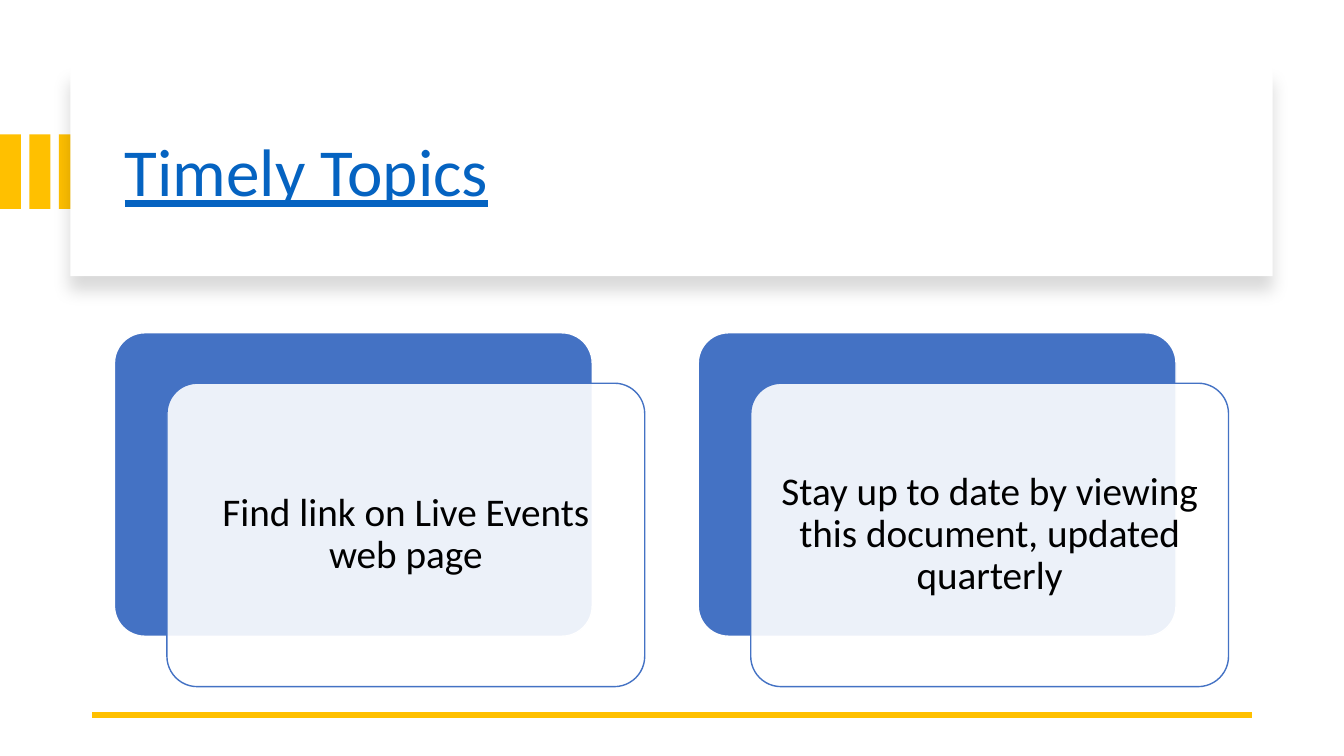
from lxml import etree
from pptx import Presentation
from pptx.dml.color import RGBColor
from pptx.enum.shapes import MSO_CONNECTOR, MSO_SHAPE
from pptx.enum.text import MSO_ANCHOR, MSO_AUTO_SIZE, PP_ALIGN
from pptx.oxml.ns import qn
from pptx.util import Pt

PX = 9525
RECT, ROUND = MSO_SHAPE.RECTANGLE, MSO_SHAPE.ROUNDED_RECTANGLE
STRAIGHT = MSO_CONNECTOR.STRAIGHT
MIDDLE, NO_FIT = MSO_ANCHOR.MIDDLE, MSO_AUTO_SIZE.NONE
LEFT, CENTER = PP_ALIGN.LEFT, PP_ALIGN.CENTER

WHITE = RGBColor(0xFF, 0xFF, 0xFF)
BLACK = RGBColor(0x00, 0x00, 0x00)
GOLD = RGBColor(0xFF, 0xC0, 0x00)
BLUE = RGBColor(0x44, 0x72, 0xC4)
LINK = RGBColor(0x05, 0x63, 0xC1)


def add_box(s, kind, x, y, w, h, fill, line=None):
    sp = s.shapes.add_shape(kind, x * PX, y * PX, w * PX, h * PX)
    sp.shadow.inherit = False
    sp.fill.solid()
    sp.fill.fore_color.rgb = fill
    if line is None:
        sp.line.fill.background()
    else:
        sp.line.color.rgb = line
        sp.line.width = Pt(1)
    if kind == ROUND:
        sp.adjustments[0] = 0.1
    return sp


def set_text(sp, text, size, color, align):
    tf = sp.text_frame
    tf.word_wrap = True
    tf.auto_size = NO_FIT
    tf.vertical_anchor = MIDDLE
    p = tf.paragraphs[0]
    p.alignment = align
    p.line_spacing = 0.9
    r = p.add_run()
    r.text = text
    r.font.name = "Calibri"
    r.font.size = Pt(size)
    r.font.color.rgb = color
    return r


prs = Presentation()
prs.slide_width, prs.slide_height = 1280 * PX, 720 * PX
s = prs.slides.add_slide(prs.slide_layouts[5])

for i in range(3):
    add_box(s, RECT, i * 28, 128, 20, 71, GOLD)

panel = add_box(s, RECT, 67, 64, 1145, 199, WHITE)
effects = panel._element.spPr.find(qn("a:effectLst"))
shadow = etree.SubElement(effects, qn("a:outerShdw"), blurRad=str(Pt(11)), dist=str(Pt(10)),
                          dir="5400000", algn="t", rotWithShape="0")
shade = etree.SubElement(shadow, qn("a:srgbClr"), val="000000")
etree.SubElement(shade, qn("a:alpha"), val="15000")

title = s.shapes.title
title.left, title.top, title.width, title.height = 109 * PX, 85 * PX, 1068 * PX, 163 * PX
set_text(title, "Timely Topics", 48, LINK, LEFT).font.underline = True
panel._element.addnext(title._element)

rule = s.shapes.add_connector(STRAIGHT, 1192 * PX, 681 * PX, 88 * PX, 681 * PX)
rule.line.color.rgb = GOLD
rule.line.width = Pt(4.5)
etree.SubElement(rule._element.spPr, qn("a:effectLst"))

CARDS = [
    "Find link on Live Events web page",
    "Stay up to date by viewing this document, updated quarterly",
]
CARD_W, CARD_H, INSET = 455, 289, 9
for i, text in enumerate(CARDS):
    x, y = 109 + i * 556, 317
    add_box(s, ROUND, x, y, CARD_W, CARD_H, BLUE, WHITE)
    x, y = x + 50, y + 48
    front = add_box(s, ROUND, x, y, CARD_W, CARD_H, WHITE, BLUE)
    color = front._element.spPr.find(qn("a:solidFill"))[0]
    etree.SubElement(color, qn("a:alpha"), val="90000")
    tb = s.shapes.add_textbox((x + INSET) * PX, (y + INSET) * PX,
                              (CARD_W - 2 * INSET) * PX, (CARD_H - 2 * INSET) * PX)
    tf = tb.text_frame
    tf.margin_left = tf.margin_right = tf.margin_top = tf.margin_bottom = 11 * PX
    set_text(tb, text, 28, BLACK, CENTER)

prs.save("out.pptx")
